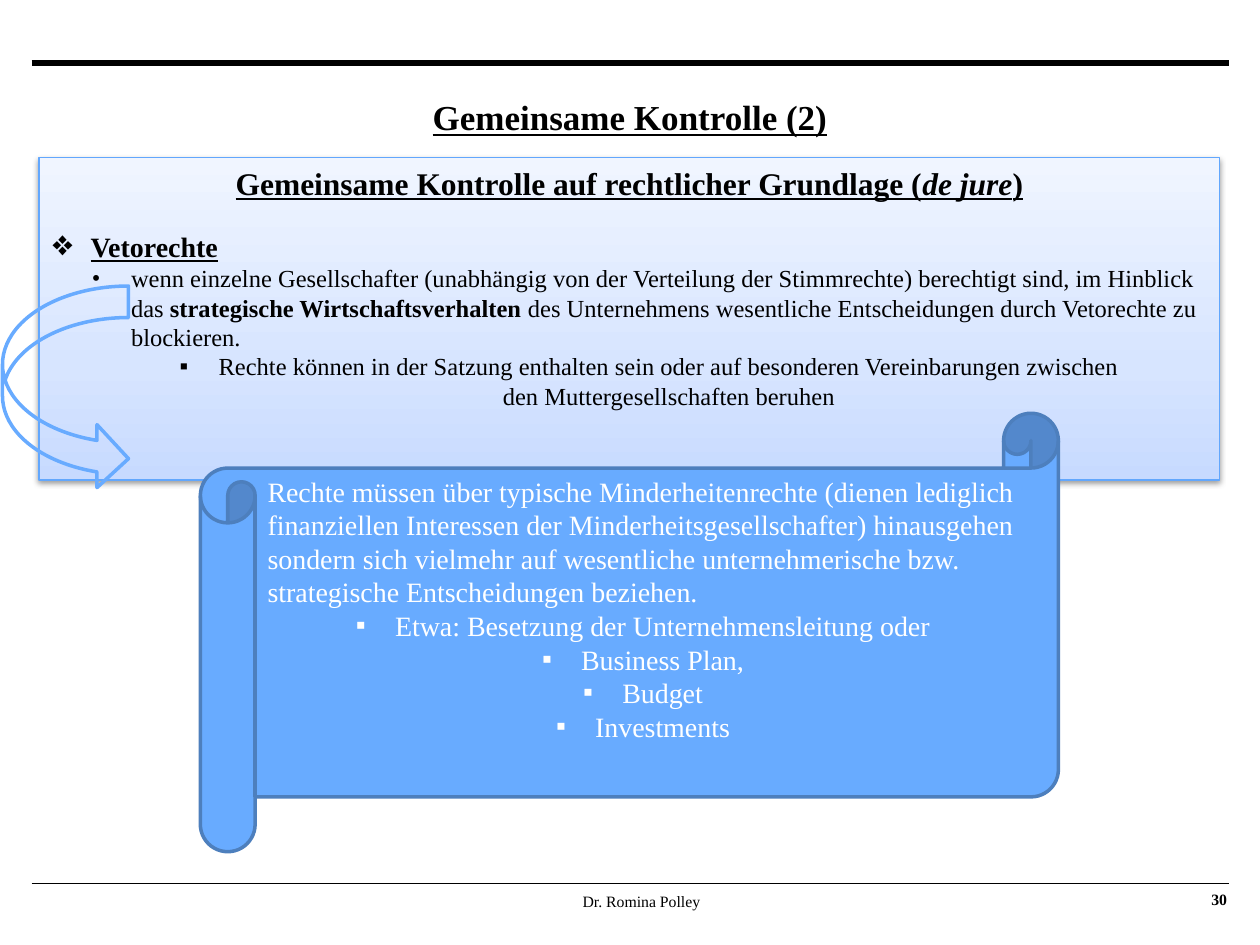
"""Builds the slide on joint control with a panel, a curved arrow and a scroll."""
from copy import deepcopy

from lxml.etree import SubElement
from pptx import Presentation
from pptx.dml.color import RGBColor
from pptx.enum.shapes import MSO_CONNECTOR, MSO_SHAPE
from pptx.enum.text import MSO_ANCHOR, MSO_AUTO_SIZE, PP_ALIGN
from pptx.oxml.ns import qn
from pptx.util import Inches, Pt

FONT = "Times New Roman"
BLACK = RGBColor(0x00, 0x00, 0x00)
WHITE = RGBColor(0xFF, 0xFF, 0xFF)
SKY = RGBColor(0x68, 0xAB, 0xFF)
STEEL = RGBColor(0x4D, 0x7F, 0xBD)
PANEL_EDGE = RGBColor(0x62, 0xA7, 0xFD)
PANEL_STOPS = [
    (0, RGBColor(0xC7, 0xDA, 0xFF)),
    (0.35, RGBColor(0xD7, 0xE5, 0xFF)),
    (1, RGBColor(0xF0, 0xF5, 0xFF)),
]

TITLE = [dict(runs=[("Gemeinsame Kontrolle (2)", "")], size=20, bold=True,
              underline=True, align=PP_ALIGN.CENTER)]
PANEL = [
    dict(runs=[("Gemeinsame Kontrolle auf rechtlicher Grundlage (", ""),
               ("de jure", "i"), (")", "")],
         size=18, bold=True, underline=True, align=PP_ALIGN.CENTER, after=16),
    dict(runs=[("Vetorechte", "")], size=16, bold=True, underline=True,
         bullet="❖", margin=0.31),
    dict(runs=[("wenn einzelne Gesellschafter (unabhängig von der Verteilung der "
                "Stimmrechte) berechtigt sind, im Hinblick das ", ""),
               ("strategische Wirtschaftsverhalten ", "b"),
               ("des Unternehmens wesentliche Entscheidungen durch Vetorechte "
                "zu blockieren.", "")],
         size=14, bullet="•", margin=0.63, level=1),
    dict(runs=[("Rechte können in der Satzung enthalten sein oder auf besonderen "
                "Vereinbarungen zwischen\nden Muttergesellschaften beruhen", "")],
         size=14, bullet="▪", margin=0.63, level=2, align=PP_ALIGN.CENTER),
]
SCROLL_TEXT = [
    "Rechte müssen über typische Minderheitenrechte (dienen lediglich finanziellen "
    "Interessen der Minderheitsgesellschafter) hinausgehen",
    "sondern sich vielmehr auf wesentliche unternehmerische bzw. strategische "
    "Entscheidungen beziehen.",
]
EXAMPLES = ["Etwa: Besetzung der Unternehmensleitung oder", "Business Plan,",
            "Budget", "Investments"]
SCROLL = [dict(runs=[(text, "")], size=16, color=WHITE) for text in SCROLL_TEXT] + [
    dict(runs=[(text, "")], size=16, color=WHITE, bullet="▪", margin=0.31,
         align=PP_ALIGN.CENTER) for text in EXAMPLES]
AUTHOR = [dict(runs=[("Dr. Romina Polley", "")], size=9, align=PP_ALIGN.CENTER)]
NUMBER = [dict(runs=[("30", "")], size=9, bold=True, align=PP_ALIGN.RIGHT)]

RULES = [(0.5, 3), (7.01, 0.75)]
HANGING = 0.31


def place(shape, left, top, width, height):
    shape.left, shape.top = Inches(left), Inches(top)
    shape.width, shape.height = Inches(width), Inches(height)


def set_bullet(paragraph, bullet, margin, color):
    properties = paragraph._p.get_or_add_pPr()
    properties.set("marL", str(Inches(margin)))
    properties.set("indent", str(Inches(-HANGING if bullet else 0)))
    if not bullet:
        SubElement(properties, qn("a:buNone"))
        return
    tint = SubElement(properties, qn("a:buClr"))
    SubElement(tint, qn("a:srgbClr"), val=str(color))
    SubElement(properties, qn("a:buFont"), typeface=FONT)
    SubElement(properties, qn("a:buChar"), char=bullet)


def write(shape, paragraphs, anchor=MSO_ANCHOR.TOP, insets=(0.1, 0.05, 0.1, 0.05)):
    frame = shape.text_frame
    frame.auto_size = MSO_AUTO_SIZE.NONE
    frame.word_wrap = True
    frame.vertical_anchor = anchor
    (frame.margin_left, frame.margin_top,
     frame.margin_right, frame.margin_bottom) = map(Inches, insets)
    for index, content in enumerate(paragraphs):
        paragraph = frame.add_paragraph() if index else frame.paragraphs[0]
        color = content.get("color", BLACK)
        paragraph.level = content.get("level", 0)
        paragraph.alignment = content.get("align", PP_ALIGN.LEFT)
        paragraph.space_before = Pt(0)
        paragraph.space_after = Pt(content.get("after", 0))
        set_bullet(paragraph, content.get("bullet"), content.get("margin", 0), color)
        font = paragraph.font
        font.name, font.size = FONT, Pt(content["size"])
        font.bold = content.get("bold", False)
        font.underline = content.get("underline", False)
        font.color.rgb = color
        for text, emphasis in content["runs"]:
            for number, line in enumerate(text.split("\n")):
                if number:
                    paragraph.add_line_break()
                run = paragraph.add_run()
                run.text = line
                if emphasis == "b":
                    run.font.bold = True
                if emphasis == "i":
                    run.font.italic = True


def style_panel(panel):
    panel.fill.gradient()
    panel.fill.gradient_angle = 90
    stop_list = panel._element.spPr.find(qn("a:gradFill")).find(qn("a:gsLst"))
    stop_list.append(deepcopy(stop_list[0]))
    for stop, (position, color) in zip(panel.fill.gradient_stops, PANEL_STOPS):
        stop.position = position
        stop.color.rgb = color
    panel.line.color.rgb = PANEL_EDGE
    panel.line.width = Pt(0.75)
    effects = SubElement(panel._element.spPr, qn("a:effectLst"))
    shadow = SubElement(effects, qn("a:outerShdw"), blurRad=str(Pt(3.1)),
                        dist=str(Pt(1.6)), dir="5400000", rotWithShape="0")
    tint = SubElement(shadow, qn("a:srgbClr"), val=str(BLACK))
    SubElement(tint, qn("a:alpha"), val="38000")


def add_rule(slide, top, weight):
    rule = slide.shapes.add_connector(MSO_CONNECTOR.STRAIGHT, Inches(0.25), Inches(top),
                                      Inches(9.75), Inches(top))
    rule.line.color.rgb = BLACK
    rule.line.width = Pt(weight)
    SubElement(rule._element.spPr, qn("a:effectLst"))


def add_outlined(slide, preset, box, line_color):
    shape = slide.shapes.add_shape(preset, *map(Inches, box))
    shape.shadow.inherit = False
    shape.line.color.rgb = line_color
    shape.line.width = Pt(2)
    return shape


def main():
    deck = Presentation()
    deck.slide_width, deck.slide_height = Inches(10), Inches(7.5)
    slide = deck.slides.add_slide(deck.slide_layouts[1])

    for top, weight in RULES:
        add_rule(slide, top, weight)

    title, panel = slide.shapes.title, slide.placeholders[1]
    place(title, 2.35, 0.71, 5.3, 0.44)
    write(title, TITLE)
    place(panel, 0.31, 1.25, 9.37, 2.56)
    style_panel(panel)
    write(panel, PANEL)

    arrow = add_outlined(slide, MSO_SHAPE.CURVED_RIGHT_ARROW, (0.02, 2.27, 1, 1.62), SKY)
    arrow.fill.background()
    scroll = add_outlined(slide, MSO_SHAPE.HORIZONTAL_SCROLL, (1.59, 3.28, 6.81, 3.48), STEEL)
    scroll.fill.solid()
    scroll.fill.fore_color.rgb = SKY
    write(scroll, SCROLL)

    author = slide.shapes.add_textbox(*map(Inches, (1.58, 7.08, 7.02, 0.2)))
    write(author, AUTHOR, MSO_ANCHOR.MIDDLE, (0.2, 0, 0.2, 0.05))
    page_number = slide.shapes.add_textbox(*map(Inches, (9.08, 7.01, 0.66, 0.26)))
    write(page_number, NUMBER, MSO_ANCHOR.MIDDLE, (0, 0, 0, 0))

    deck.save("out.pptx")


if __name__ == "__main__":
    main()
